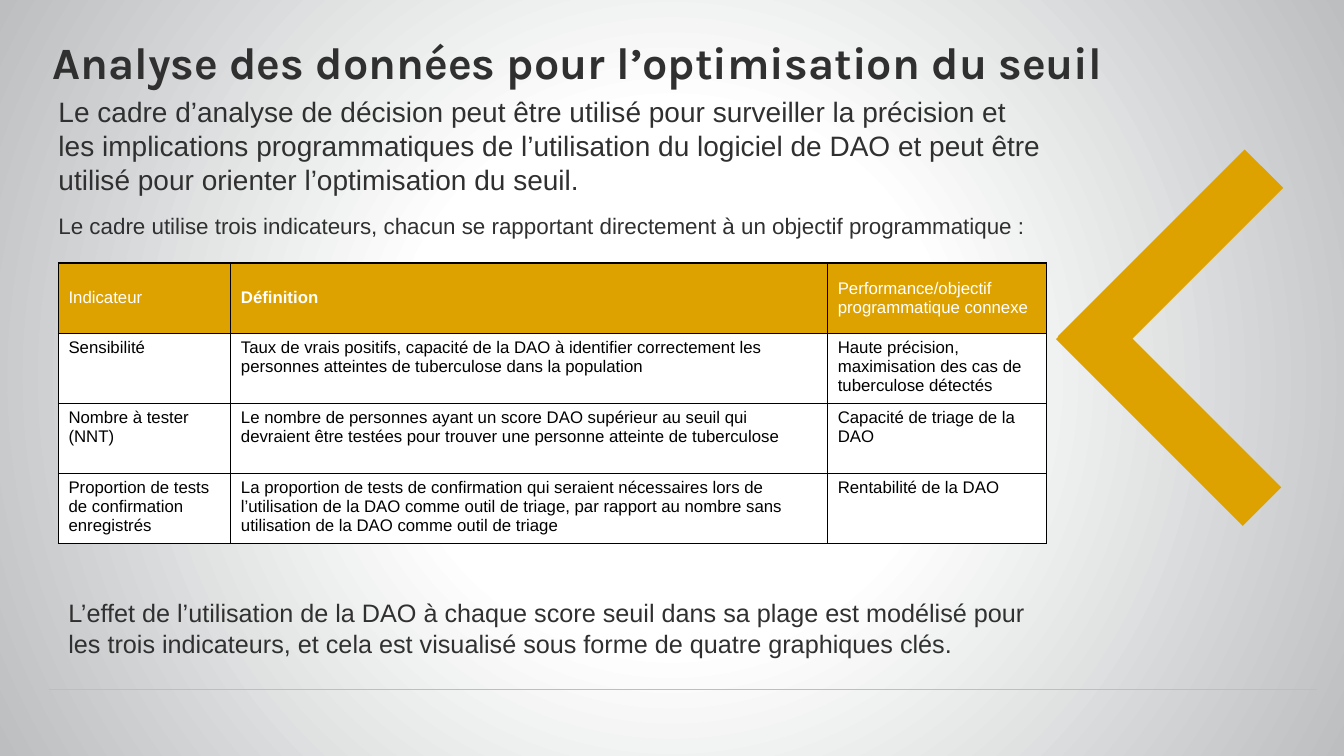
import pptx
import pptx.dml.color
import pptx.enum.shapes
import pptx.enum.text
import pptx.oxml
import pptx.oxml.ns
import pptx.util
from lxml import etree
from pptx.util import Inches

COLORS = {"gold": "DDA200", "text": "303030", "rule": "BCBEC0", "black": "000000", "white": "FFFFFF"}
ANCHOR = pptx.enum.text.MSO_ANCHOR

INDICATORS = [
    ["Indicateur", "Définition", "Performance/objectif programmatique connexe"],
    ["Sensibilité",
     "Taux de vrais positifs, capacité de la DAO à identifier correctement les personnes "
     "atteintes de tuberculose dans la population",
     "Haute précision, maximisation des cas de tuberculose détectés"],
    ["Nombre à tester (NNT)",
     "Le nombre de personnes ayant un score DAO supérieur au seuil qui devraient être testées "
     "pour trouver une personne atteinte de tuberculose",
     "Capacité de triage de la DAO"],
    ["Proportion de tests de confirmation enregistrés",
     "La proportion de tests de confirmation qui seraient nécessaires lors de l’utilisation de la "
     "DAO comme outil de triage, par rapport au nombre sans utilisation de la DAO comme outil de triage",
     "Rentabilité de la DAO"],
]
INTRODUCTION = [
    ("Le cadre d’analyse de décision peut être utilisé pour surveiller la précision et les implications "
     "programmatiques de l’utilisation du logiciel de DAO et peut être utilisé pour orienter "
     "l’optimisation du seuil.", 20, 0),
    ("Le cadre utilise trois indicateurs, chacun se rapportant directement à un objectif "
     "programmatique :", 16, 12),
]
CONCLUSION = ("L’effet de l’utilisation de la DAO à chaque score seuil dans sa plage est modélisé pour les "
              "trois indicateurs, et cela est visualisé sous forme de quatre graphiques clés.")


def rgb(name):
    return pptx.dml.color.RGBColor.from_string(COLORS[name])


def set_font(paragraph, size, color="text", name="Arial", bold=False):
    paragraph.font.name = name
    paragraph.font.size = pptx.util.Pt(size)
    paragraph.font.bold = bold
    paragraph.font.color.rgb = rgb(color)


def place(shape, left, top, width, height):
    shape.left, shape.top = Inches(left), Inches(top)
    shape.width, shape.height = Inches(width), Inches(height)


def set_frame(shape, anchor, side_inset):
    frame = shape.text_frame
    frame.word_wrap = True
    frame.auto_size = pptx.enum.text.MSO_AUTO_SIZE.NONE
    frame.vertical_anchor = anchor
    frame.margin_left = frame.margin_right = Inches(side_inset)
    frame.margin_top = frame.margin_bottom = Inches(0.05)
    return frame


def set_background(slide):
    """Radial gradient, white in the middle and grey at the edges."""
    slide.background.fill.gradient()
    gradient = slide.background.fill._fill._gradFill
    for child in list(gradient):
        gradient.remove(child)
    stops = "".join(
        f'<a:gs pos="{position}"><a:srgbClr val="{COLORS[color]}"/></a:gs>'
        for position, color in ((0, "white"), (35000, "white"), (100000, "rule")))
    parts = pptx.oxml.parse_xml(
        f'<a:gradFill {pptx.oxml.ns.nsdecls("a")}><a:gsLst>{stops}</a:gsLst><a:path path="circle">'
        '<a:fillToRect l="50000" t="50000" r="50000" b="50000"/></a:path></a:gradFill>')
    for part in list(parts):
        gradient.append(part)


def add_footer_rule(slide):
    rule = slide.shapes.add_connector(
        pptx.enum.shapes.MSO_CONNECTOR.STRAIGHT, Inches(0.49), Inches(6.84), Inches(13.06), Inches(6.84))
    rule.line.color.rgb = rgb("rule")
    rule.line.width = pptx.util.Pt(0.75)
    etree.SubElement(rule._element.spPr, pptx.oxml.ns.qn("a:effectLst"))


def add_chevron(slide):
    chevron = slide.shapes.add_group_shape()
    for left, top, rotation in ((10.3, 2.33, 315), (10.28, 3.83, 45)):
        arm = chevron.shapes.add_shape(
            pptx.enum.shapes.MSO_SHAPE.RECTANGLE, Inches(left), Inches(top), Inches(2.62), Inches(0.54))
        arm.rotation = rotation
        arm.shadow.inherit = False
        arm.fill.solid()
        arm.fill.fore_color.rgb = rgb("gold")
        arm.line.fill.background()


def fill_title(title):
    place(title, 0.52, 0.44, 11.49, 0.49)
    frame = set_frame(title, ANCHOR.BOTTOM, 0)
    frame.text = "Analyse des données pour l’optimisation du seuil"
    paragraph = frame.paragraphs[0]
    paragraph.alignment = pptx.enum.text.PP_ALIGN.LEFT
    paragraph.line_spacing = 0.9
    set_font(paragraph, 32, name="Karla", bold=True)


def fill_introduction(body):
    place(body, 0.58, 0.89, 9.8, 2.22)
    frame = set_frame(body, ANCHOR.TOP, 0)
    frame.text = "\n".join(text for text, _, _ in INTRODUCTION)
    for paragraph, (_, size, space_before) in zip(frame.paragraphs, INTRODUCTION):
        properties = paragraph._p.get_or_add_pPr()
        properties.set("marL", "0")
        properties.set("indent", "0")
        etree.SubElement(properties, pptx.oxml.ns.qn("a:buNone"))
        paragraph.space_before = pptx.util.Pt(space_before)
        set_font(paragraph, size)


def add_borders(cell):
    properties = cell._tc.get_or_add_tcPr()
    for side in ("lnL", "lnR", "lnT", "lnB"):
        properties.append(pptx.oxml.parse_xml(
            f'<a:{side} {pptx.oxml.ns.nsdecls("a")} w="12700"><a:solidFill>'
            f'<a:srgbClr val="{COLORS["black"]}"/></a:solidFill></a:{side}>'))


def add_indicator_table(slide):
    table = slide.shapes.add_table(
        len(INDICATORS), 3, Inches(0.58), Inches(2.61), Inches(9.8), Inches(2.78)).table
    for column, width in zip(table.columns, (1.71, 5.92, 2.17)):
        column.width = Inches(width)
    for row_index, texts in enumerate(INDICATORS):
        header = row_index == 0
        table.rows[row_index].height = Inches(0.695)
        for column_index, text in enumerate(texts):
            cell = table.cell(row_index, column_index)
            add_borders(cell)
            cell.fill.solid()
            cell.fill.fore_color.rgb = rgb("gold" if header else "white")
            cell.vertical_anchor = ANCHOR.MIDDLE if header else ANCHOR.TOP
            cell.text = text
            set_font(cell.text_frame.paragraphs[0], 12, "white" if header else "black",
                     bold=header and column_index == 1)


def add_conclusion(slide):
    box = slide.shapes.add_textbox(Inches(0.58), Inches(5.88), Inches(9.86), Inches(0.71))
    frame = set_frame(box, ANCHOR.TOP, 0.1)
    frame.auto_size = pptx.enum.text.MSO_AUTO_SIZE.SHAPE_TO_FIT_TEXT
    frame.text = CONCLUSION
    set_font(frame.paragraphs[0], 18)


def main():
    presentation = pptx.Presentation()
    presentation.slide_width, presentation.slide_height = Inches(13.33), Inches(7.5)
    slide = presentation.slides.add_slide(presentation.slide_layouts[1])
    set_background(slide)
    add_footer_rule(slide)
    add_chevron(slide)
    fill_title(slide.shapes.title)
    fill_introduction(slide.placeholders[1])
    add_indicator_table(slide)
    add_conclusion(slide)
    presentation.save("out.pptx")


if __name__ == "__main__":
    main()
